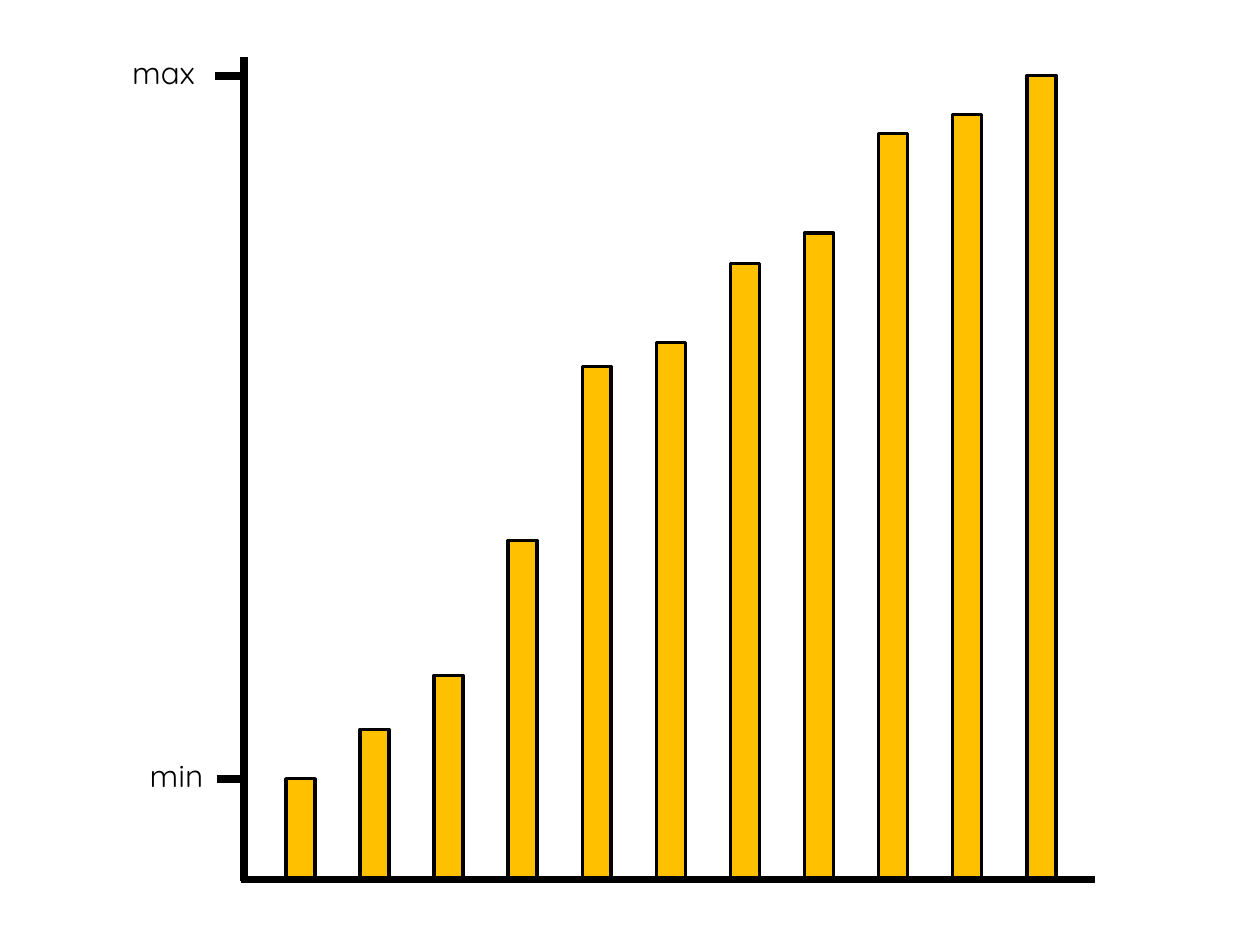
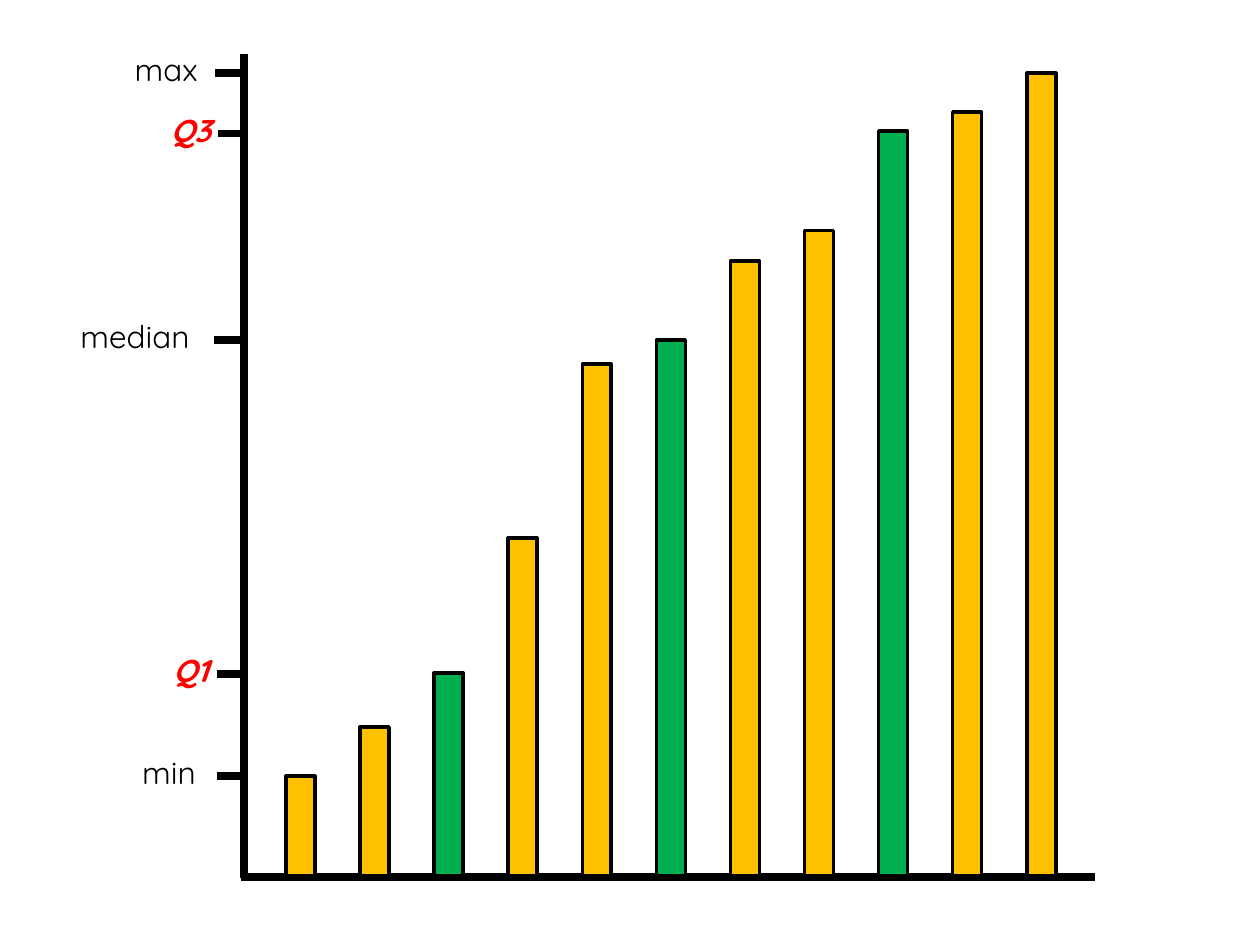
"""Build two slides of sorted bars that mark the range and the quartiles."""
from pptx import Presentation
from pptx.dml.color import RGBColor
from pptx.enum.shapes import MSO_CONNECTOR, MSO_SHAPE
from pptx.enum.text import MSO_AUTO_SIZE, PP_ALIGN
from pptx.oxml.ns import qn
from pptx.util import Pt

LINE, RECT = MSO_CONNECTOR.STRAIGHT, MSO_SHAPE.RECTANGLE
GROW = MSO_AUTO_SIZE.SHAPE_TO_FIT_TEXT
LEFT, RIGHT = PP_ALIGN.LEFT, PP_ALIGN.RIGHT

PX = 9144
FONT, SIZE = "Quicksand", 18
HEX = {"ink": "000000", "bar": "FFC000", "pick": "00B050", "quart": "FF0000"}

BARS = [79, 118, 161, 268, 406, 425, 488, 512, 591, 606, 637]
KEYS = ("text", "bar", "drop", "tick", "left", "width", "quart")
SLIDES = [
    {"base": 697, "picks": (), "marks": [
        ("min", 0, 0, 172, 109, 77, False),
        ("max", 10, 0, 171, 95, 87, False),
    ]},
    {"base": 695, "picks": (2, 5, 8), "marks": [
        ("max", 10, 0, 171, 97, 85, False),
        ("min", 0, 0, 172, 103, 83, False),
        ("median", 5, 0, 170, 54, 135, False),
        ("Q1", 2, 1, 172, 61, 114, True),
        ("Q3", 8, 2, 173, 63, 114, True),
    ]},
]
FIRST, STEP, WIDE = 227, 58.8, 23
AXIS, START, END = 194, 191, 869
RISE, TICK, LIFT, TALL = 652, 22, 23, 40


def emu(*sizes):
    return [round(size * PX) for size in sizes]


def tint(name):
    return RGBColor.from_string(HEX[name])


def add_line(slide, *ends):
    line = slide.shapes.add_connector(LINE, *emu(*ends))
    line.line.color.rgb = tint("ink")
    line.line.width = Pt(4.5)
    props = line._element.spPr
    props.append(props.makeelement(qn("a:effectLst"), {}))


def add_bar(slide, index, tall, base, name):
    box = emu(FIRST + index * STEP, base - tall, WIDE, tall)
    bar = slide.shapes.add_shape(RECT, *box)
    bar.shadow.inherit = False
    bar.fill.solid()
    bar.fill.fore_color.rgb = tint(name)
    bar.line.color.rgb = tint("ink")
    bar.line.width = Pt(2)


def add_mark(slide, mark, base):
    y = base - BARS[mark["bar"]] + mark["drop"]
    add_line(slide, mark["tick"], y, mark["tick"] + TICK, y)
    box = emu(mark["left"], y - LIFT, mark["width"], TALL)
    frame = slide.shapes.add_textbox(*box).text_frame
    frame.word_wrap = True
    frame.auto_size = GROW
    para = frame.paragraphs[0]
    para.alignment = RIGHT if mark["quart"] else LEFT
    run = para.add_run()
    run.text = mark["text"]
    font = run.font
    font.name, font.size = FONT, Pt(SIZE)
    font.bold = font.italic = mark["quart"]
    font.color.rgb = tint("quart" if mark["quart"] else "ink")


def add_plot(deck, plot):
    slide = deck.slides.add_slide(deck.slide_layouts[6])
    base = plot["base"]
    add_line(slide, START, base + 1, END, base + 1)
    for index, tall in enumerate(BARS):
        name = "pick" if index in plot["picks"] else "bar"
        add_bar(slide, index, tall, base, name)
    add_line(slide, AXIS, base - RISE, AXIS, base + 2)
    for mark in plot["marks"]:
        add_mark(slide, dict(zip(KEYS, mark)), base)


def main():
    deck = Presentation()
    deck.slide_width, deck.slide_height = emu(1000, 750)
    for plot in SLIDES:
        add_plot(deck, plot)
    deck.save("out.pptx")


if __name__ == "__main__":
    main()
